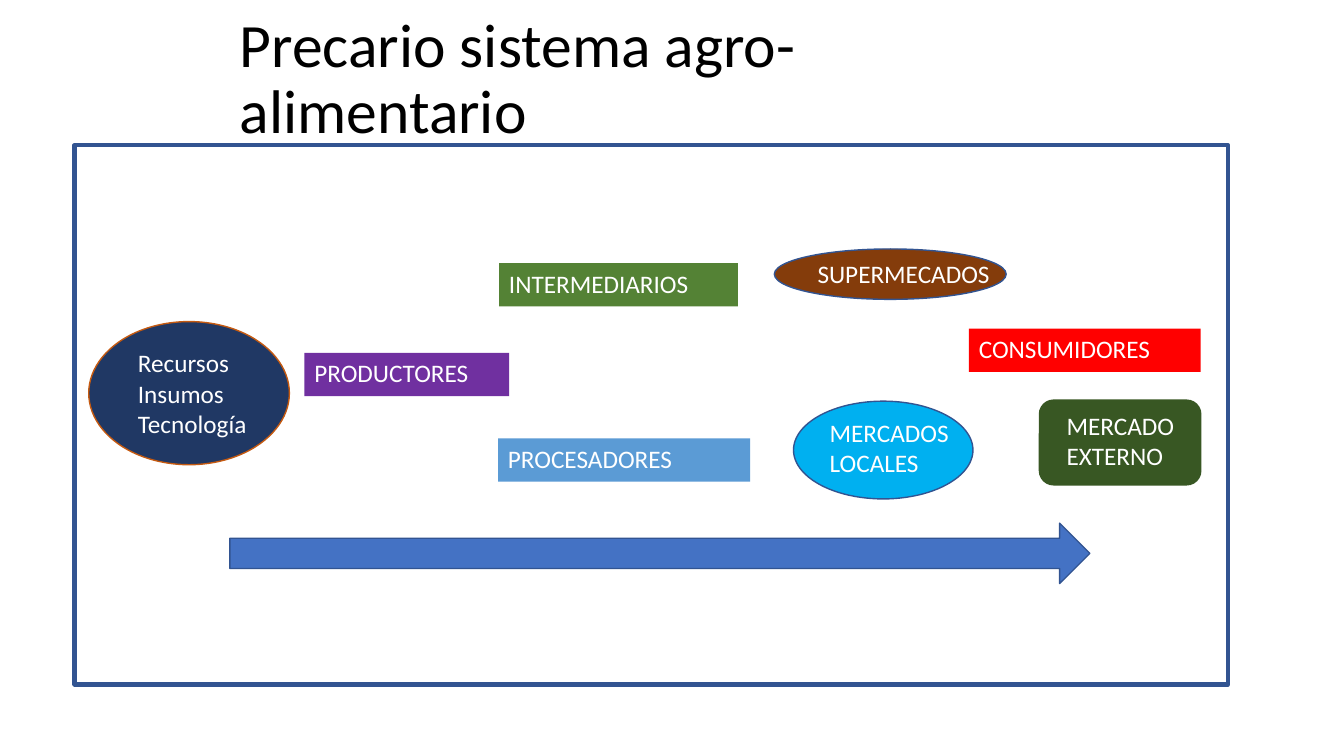
import pptx
import pptx.util
import pptx.dml.color
import pptx.enum.shapes
import pptx.enum.text

Inches = pptx.util.Inches
Pt = pptx.util.Pt
KIND = pptx.enum.shapes.MSO_SHAPE
ANCHOR = pptx.enum.text.MSO_ANCHOR
LEFT = pptx.enum.text.PP_ALIGN.LEFT


def color(code):
    return pptx.dml.color.RGBColor.from_string(code)


class Board:
    font = "Calibri"
    size = 18
    light = "FFFFFF"
    edge = "325491"

    def __init__(self, slide):
        self.slide = slide

    def letter(self, shape, lines, size=None, ink=None, anchor=ANCHOR.TOP):
        """Fill a shape with left-aligned lines, one paragraph each."""
        frame = shape.text_frame
        frame.word_wrap = True
        frame.vertical_anchor = anchor
        frame.text = "\n".join(lines)
        for para in frame.paragraphs:
            para.alignment = LEFT
            para.font.name = self.font
            para.font.size = Pt(size or self.size)
            para.font.color.rgb = color(ink or self.light)
        return frame

    def shape(self, kind, box, fill=None, line=None, width=1):
        item = self.slide.shapes.add_shape(kind, *map(Inches, box))
        item.shadow.inherit = False
        if fill:
            item.fill.solid()
            item.fill.fore_color.rgb = color(fill)
        else:
            item.fill.background()
        if line:
            item.line.color.rgb = color(line)
            item.line.width = Pt(width)
        else:
            item.line.fill.background()
        return item

    def label(self, box, *lines, **style):
        item = self.slide.shapes.add_textbox(*map(Inches, box))
        return self.letter(item, lines, **style)

    def title(self, box, text):
        frame = self.label(box, text, size=44, ink="000000",
                           anchor=ANCHOR.MIDDLE)
        frame.margin_right = Inches(0.2)
        frame.paragraphs[0].line_spacing = 0.9

    def actor(self, left, top, width, fill, text):
        item = self.shape(KIND.RECTANGLE, (left, top, width, 0.43), fill)
        self.letter(item, [text])


def main():
    deck = pptx.Presentation()
    deck.slide_width = Inches(13.33)
    deck.slide_height = Inches(7.5)
    board = Board(deck.slides.add_slide(deck.slide_layouts[6]))

    board.title((2.28, 0.16, 8.53, 1.28), "Precario sistema agro-alimentario")

    board.shape(KIND.ROUNDED_RECTANGLE, (10.31, 3.97, 1.6, 0.84),
                "385723", "385723")
    for box, fill, line in (
        ((7.87, 3.98, 1.78, 0.97), "00B0F0", board.edge),
        ((7.68, 2.47, 2.3, 0.5), "843C0B", board.edge),
        ((0.88, 3.19, 1.99, 1.42), "203864", "C55A11"),
    ):
        board.shape(KIND.OVAL, box, fill, line)

    board.label((1.27, 3.4, 1.87, 1.08), "Recursos", "Insumos", "Tecnología")
    for actor in (
        (3.02, 3.5, 2.03, "7030A0", "PRODUCTORES"),
        (4.95, 2.61, 2.37, "548235", "INTERMEDIARIOS"),
        (4.94, 4.35, 2.5, "5B9BD5", "PROCESADORES"),
        (9.61, 3.26, 2.3, "FF0000", "CONSUMIDORES"),
    ):
        board.actor(*actor)

    board.label((8.01, 2.51, 2.18, 0.43), "SUPERMECADOS")
    board.label((8.13, 4.09, 2.19, 0.75), "MERCADOS LOCALES")
    board.label((10.48, 4.02, 1.6, 0.75), "MERCADO EXTERNO")

    board.shape(KIND.RECTANGLE, (0.74, 1.44, 11.44, 5.35),
                line=board.edge, width=3)
    board.shape(KIND.RIGHT_ARROW, (2.28, 5.19, 8.53, 0.6),
                "4472C4", board.edge)

    deck.save("out.pptx")


if __name__ == "__main__":
    main()
